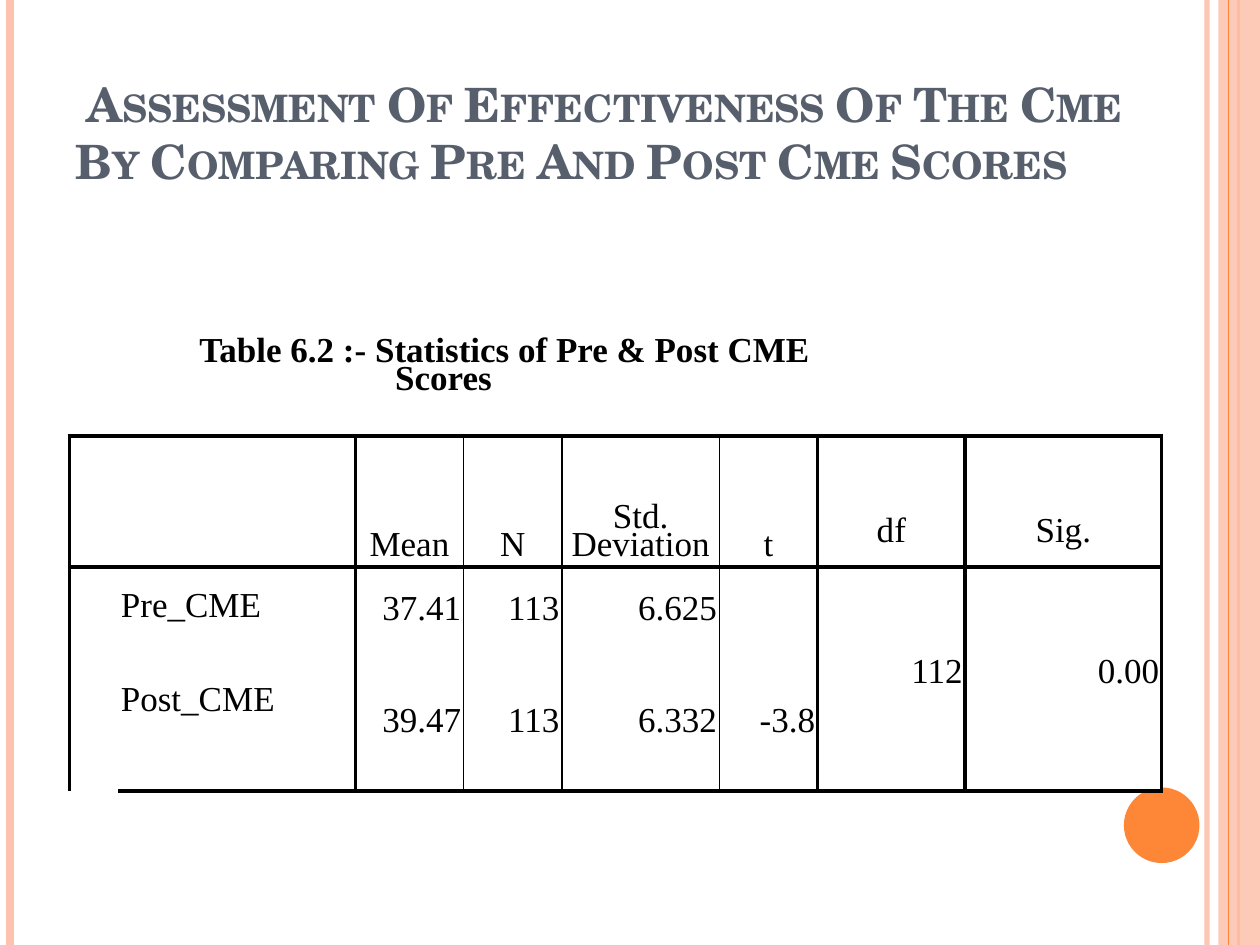
from lxml import etree
from pptx import Presentation
from pptx import util as u
from pptx.dml.color import RGBColor
from pptx.enum import shapes, text
from pptx.oxml.ns import qn

WIDTH, HEIGHT = 10, 7.5
PEACH, ORANGE, SLATE, BLACK, WHITE = "FEC3AE", "FE8637", "575F6D", "000000", "FFFFFF"
TITLE = " Assessment Of Effectiveness Of The Cme By Comparing Pre And Post Cme Scores"
CAPTION = "Table 6.2 :- Statistics of Pre & Post CME Scores"

# x, colour, width in points, opacity in percent
RULES_BEHIND = [(9.58, PEACH, 3, 93), (0.08, PEACH, 4.5, 100), (9.83, ORANGE, 1.5, 100)]
RULE_ON_BAND = (9.75, ORANGE, 0.75, 100)

TABLE_LEFT, TABLE_TOP = 0.55, 2.42
COLUMNS = [0.39, 1.88, 0.86, 0.78, 1.25, 0.78, 1.17, 1.56]
ROWS = [1.04, 1.04, 0.74, 1.04]
STATISTICS = [
    ["", "", "Mean", "N", "Std. Deviation", "t", "df", "Sig."],
    ["", "Pre_CME", "37.41", "113", "6.625", "", "", ""],
    ["", "Post_CME", "39.47", "113", "6.332", "-3.8", "112", "0.00"],
]
HEADER_ROW = 1
LABEL_COLUMN, FIRST_TOP_COLUMN = 1, 6
LINE_PITCH = 16
INSET = 0.02

# Line widths by grid edge; edges left out have no line
VERTICAL_EDGES = {0: 2.25, 2: 2.25, 3: 1, 4: 1, 5: 1, 6: 2.25, 7: 2.25, 8: 2.25}
HORIZONTAL_EDGES = {1: 2.25, 2: 2.25, 4: 2.25}


def color(value):
    return RGBColor.from_string(value)


def set_opacity(fill, percent):
    if percent < 100:
        rgb = fill._xPr.find(".//" + qn("a:srgbClr"))
        etree.SubElement(rgb, qn("a:alpha"), val=str(percent * 1000))


def add_rule(slide, x, rgb, width, opacity):
    """Add a full-height vertical line."""
    rule = slide.shapes.add_connector(
        shapes.MSO_CONNECTOR.STRAIGHT, u.Inches(x), 0, u.Inches(x), u.Inches(HEIGHT))
    rule.line.color.rgb = color(rgb)
    rule.line.width = u.Pt(width)
    set_opacity(rule.line.fill, opacity)
    etree.SubElement(rule._element.spPr, qn("a:effectLst"))


def add_plain_shape(slide, kind, box, rgb, opacity=100):
    shape = slide.shapes.add_shape(kind, *map(u.Inches, box))
    shape.shadow.inherit = False
    shape.fill.solid()
    shape.fill.fore_color.rgb = color(rgb)
    set_opacity(shape.fill, opacity)
    shape.line.fill.background()


def add_run(paragraph, words, size, font, rgb, bold):
    run = paragraph.add_run()
    run.text = words
    run.font.size = u.Pt(size)
    run.font.name = font
    run.font.color.rgb = color(rgb)
    run.font.bold = bold
    return run


def add_title(slide):
    box = slide.shapes.add_textbox(*map(u.Inches, (0.5, 0.3, 8.95, 1.25)))
    frame = box.text_frame
    frame.word_wrap = True
    frame.vertical_anchor = text.MSO_ANCHOR.BOTTOM
    run = add_run(frame.paragraphs[0], TITLE, 27, "TeX Gyre Schola", SLATE, True)
    run.font._element.set("cap", "small")


def set_borders(cell, row, column):
    sides = {
        "a:lnL": VERTICAL_EDGES.get(column) if row else None,
        "a:lnR": VERTICAL_EDGES.get(column + 1) if row else None,
        "a:lnT": HORIZONTAL_EDGES.get(row),
        "a:lnB": HORIZONTAL_EDGES.get(row + 1),
    }
    properties = cell._tc.get_or_add_tcPr()
    for tag, width in sides.items():
        line = etree.SubElement(properties, qn(tag))
        if width:
            line.set("w", str(u.Pt(width)))
            fill = etree.SubElement(line, qn("a:solidFill"))
            etree.SubElement(fill, qn("a:srgbClr"), val=BLACK)
        else:
            etree.SubElement(line, qn("a:noFill"))


def write_cell(cell, words, align, anchor, lines_above=0, bold=False):
    cell.margin_left = cell.margin_right = cell.margin_bottom = u.Inches(INSET)
    cell.margin_top = u.Inches(INSET) + u.Pt(lines_above * LINE_PITCH)
    cell.vertical_anchor = anchor
    paragraph = cell.text_frame.paragraphs[0]
    paragraph.alignment = align
    paragraph.line_spacing = u.Pt(LINE_PITCH)
    add_run(paragraph, words, 20, "Times New Roman", BLACK, bold)
    return paragraph


def cell_layout(row, column):
    """Return alignment, anchor and the number of empty lines above."""
    align, anchor = text.PP_ALIGN, text.MSO_ANCHOR
    if row == HEADER_ROW:
        if column >= FIRST_TOP_COLUMN:
            return align.CENTER, anchor.TOP, 3
        return align.CENTER, anchor.BOTTOM, 0
    if column == LABEL_COLUMN:
        return align.LEFT, anchor.TOP, 1
    return align.RIGHT, anchor.TOP if column >= FIRST_TOP_COLUMN else anchor.MIDDLE, 0


def add_statistics(slide):
    box = (TABLE_LEFT, TABLE_TOP, sum(COLUMNS), sum(ROWS))
    table = slide.shapes.add_table(len(ROWS), len(COLUMNS), *map(u.Inches, box)).table
    table.first_row = table.horz_banding = False
    for column, width in zip(table.columns, COLUMNS):
        column.width = u.Inches(width)
    for row, height in zip(table.rows, ROWS):
        row.height = u.Inches(height)
    for row in range(len(ROWS)):
        for column in range(len(COLUMNS)):
            cell = table.cell(row, column)
            set_borders(cell, row, column)
            cell.fill.solid()
            cell.fill.fore_color.rgb = color(WHITE)
    table.cell(0, 0).merge(table.cell(0, 5))
    table.cell(2, 0).merge(table.cell(3, 0))

    caption = write_cell(table.cell(0, 0), CAPTION, text.PP_ALIGN.CENTER,
                         text.MSO_ANCHOR.MIDDLE, bold=True)
    caption._p.get_or_add_pPr().set("indent", str(u.Inches(0.97)))
    for row, values in enumerate(STATISTICS, HEADER_ROW):
        for column, words in enumerate(values):
            if words:
                write_cell(table.cell(row, column), words, *cell_layout(row, column))


def main():
    presentation = Presentation()
    presentation.slide_width = u.Inches(WIDTH)
    presentation.slide_height = u.Inches(HEIGHT)
    slide = presentation.slides.add_slide(presentation.slide_layouts[6])
    for rule in RULES_BEHIND:
        add_rule(slide, *rule)
    add_plain_shape(slide, shapes.MSO_SHAPE.RECTANGLE, (9.67, 0, 0.33, HEIGHT), PEACH, 87)
    add_rule(slide, *RULE_ON_BAND)
    add_plain_shape(slide, shapes.MSO_SHAPE.OVAL, (8.92, 6.25, 0.6, 0.6), ORANGE)
    add_title(slide)
    add_statistics(slide)
    presentation.save("out.pptx")


if __name__ == "__main__":
    main()
